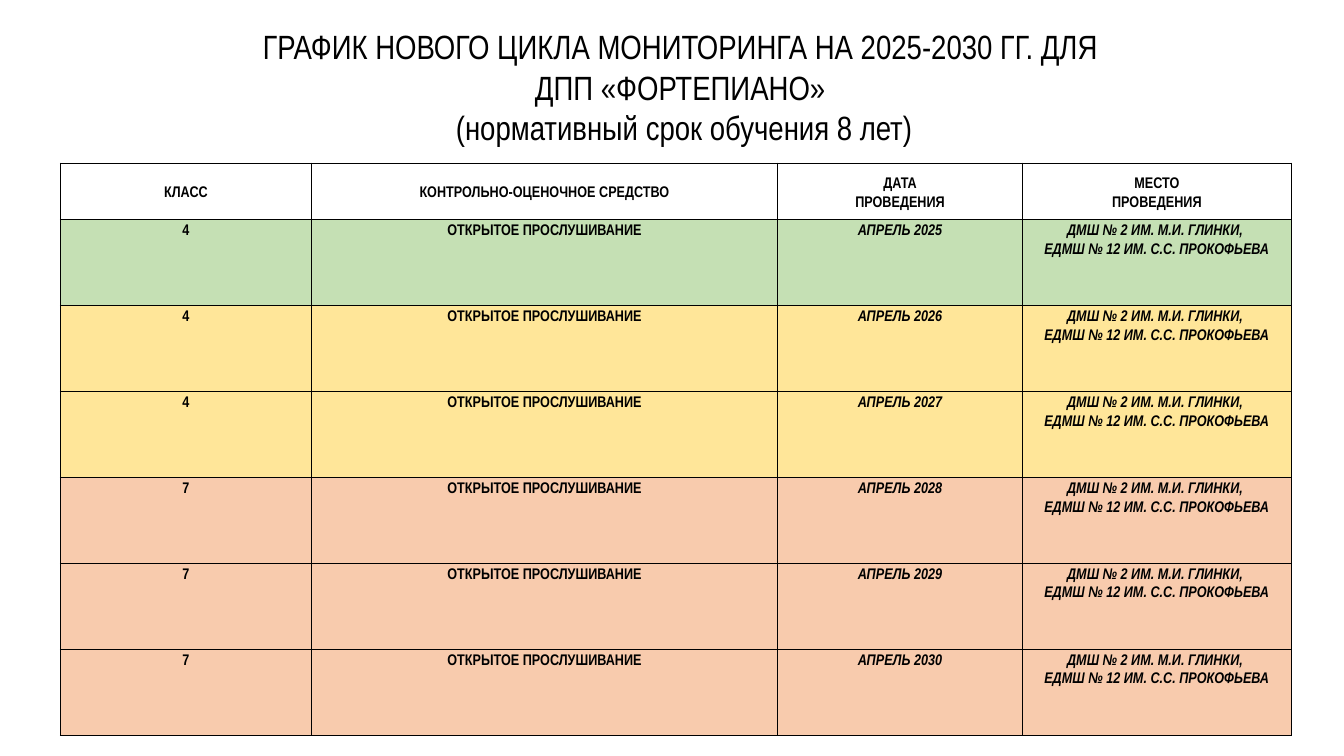
from lxml import etree
from pptx import Presentation
from pptx.dml.color import RGBColor
from pptx.enum import text
from pptx.oxml.ns import qn
from pptx.util import Pt

FONT = "Arial Narrow"
BLACK = "000000"
GREEN, YELLOW, PEACH = "C5E0B4", "FFE699", "F8CBAD"
TITLE = [
    "ГРАФИК НОВОГО ЦИКЛА МОНИТОРИНГА НА 2025-2030 ГГ. ДЛЯ ",
    "ДПП «ФОРТЕПИАНО» ",
    "(нормативный срок обучения 8 лет)",
]
HEADS = [["КЛАСС"], ["КОНТРОЛЬНО-ОЦЕНОЧНОЕ СРЕДСТВО"],
         ["ДАТА", "ПРОВЕДЕНИЯ"], ["МЕСТО", "ПРОВЕДЕНИЯ"]]
EVENT = "ОТКРЫТОЕ ПРОСЛУШИВАНИЕ"
PLACE = "ДМШ № 2 ИМ. М.И. ГЛИНКИ, \nЕДМШ № 12 ИМ. С.С. ПРОКОФЬЕВА"
GRADES = [("4", GREEN), ("4", YELLOW), ("4", YELLOW),
          ("7", PEACH), ("7", PEACH), ("7", PEACH)]
WIDTHS = [179.3, 333, 175, 191.9]
HEAD_H, ROW_H = 40.4, 61.4


def color(code):
    return RGBColor.from_string(code)


def write(frame, lines, size, space=None, bold=False, italic=False):
    """Fill a text frame with centred paragraphs; a newline is a line break."""
    for i, line in enumerate(lines):
        para = frame.paragraphs[0] if i == 0 else frame.add_paragraph()
        para.alignment = text.PP_ALIGN.CENTER
        para.line_spacing = space
        for j, part in enumerate(line.split("\n")):
            if j:
                para.add_line_break()
            run = para.add_run()
            run.text = part
            font = run.font
            font.name, font.size = FONT, Pt(size)
            font.bold, font.italic = bold, italic
            font.color.rgb = color(BLACK)


def border(cell):
    props = cell._tc.get_or_add_tcPr()
    for i, side in enumerate(("lnL", "lnR", "lnT", "lnB")):
        line = etree.Element(qn("a:" + side), w=str(Pt(1)))
        fill = etree.SubElement(line, qn("a:solidFill"))
        etree.SubElement(fill, qn("a:srgbClr"), val=BLACK)
        props.insert(i, line)


def put(cell, lines, fill=None, italic=False):
    cell.margin_left = cell.margin_right = Pt(5)
    cell.margin_top = cell.margin_bottom = 0
    if fill:
        cell.fill.solid()
        cell.fill.fore_color.rgb = color(fill)
    else:
        cell.fill.background()
        cell.vertical_anchor = text.MSO_ANCHOR.MIDDLE
    border(cell)
    write(cell.text_frame, lines, 11, space=1.3, bold=True, italic=italic)


def title(slide, x, y, w, h):
    frame = slide.shapes.add_textbox(Pt(x), Pt(y), Pt(w), Pt(h)).text_frame
    frame.word_wrap = True
    frame.auto_size = text.MSO_AUTO_SIZE.SHAPE_TO_FIT_TEXT
    write(frame, TITLE, 24)


def schedule(slide, x, y):
    count = len(GRADES) + 1
    high = HEAD_H + ROW_H * len(GRADES)
    table = slide.shapes.add_table(count, len(WIDTHS), Pt(x), Pt(y),
                                   Pt(sum(WIDTHS)), Pt(high)).table
    table.first_row = table.horz_banding = False
    for col, width in zip(table.columns, WIDTHS):
        col.width = Pt(width)
    for i, row in enumerate(table.rows):
        row.height = Pt(ROW_H if i else HEAD_H)
    for c, lines in enumerate(HEADS):
        put(table.cell(0, c), lines)
    for r, (grade, fill) in enumerate(GRADES, 1):
        values = [grade, EVENT, f"АПРЕЛЬ {2024 + r}", PLACE]
        for c, value in enumerate(values):
            put(table.cell(r, c), [value], fill, italic=c > 1)


def main():
    deck = Presentation()
    deck.slide_width, deck.slide_height = Pt(960), Pt(540)
    slide = deck.slides.add_slide(deck.slide_layouts[6])
    title(slide, 128.2, 15.1, 720.7, 94.3)
    schedule(slide, 43.2, 116.6)
    deck.save("out.pptx")


if __name__ == "__main__":
    main()
